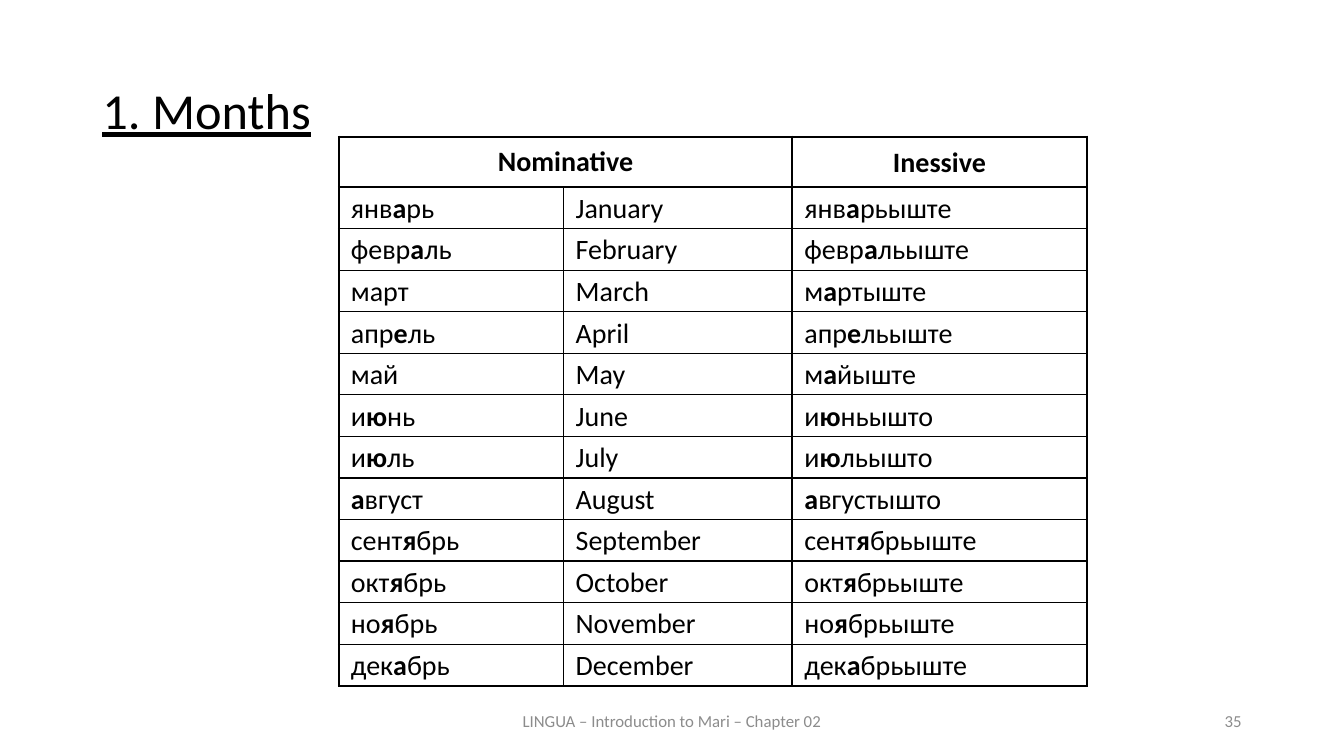
import pptx
import pptx.dml.color
import pptx.enum.text
import pptx.oxml.ns
import pptx.util
from lxml import etree

Pt = pptx.util.Pt
ALIGN = pptx.enum.text.PP_ALIGN
MIDDLE = pptx.enum.text.MSO_ANCHOR.MIDDLE

# Content: stressed vowels stand between asterisks
TITLE = "1. Months"
HEADERS = {0: "*Nominative*", 2: "*Inessive*"}
MONTHS = [
    ("янв*а*рь", "January", "янв*а*рьыште"),
    ("февр*а*ль", "February", "февр*а*льыште"),
    ("март", "March", "м*а*ртыште"),
    ("апр*е*ль", "April", "апр*е*льыште"),
    ("май", "May", "м*а*йыште"),
    ("и*ю*нь", "June", "и*ю*ньышто"),
    ("и*ю*ль", "July", "и*ю*льышто"),
    ("*а*вгуст", "August", "*а*вгустышто"),
    ("сент*я*брь", "September", "сент*я*брьыште"),
    ("окт*я*брь", "October", "окт*я*брьыште"),
    ("но*я*брь", "November", "но*я*брьыште"),
    ("дек*а*брь", "December", "дек*а*брьыште"),
]
# Text, left, width, alignment
FOOTERS = [
    ("LINGUA – Introduction to Mari – Chapter 02", 318, 324, ALIGN.CENTER),
    ("35", 678, 216, ALIGN.RIGHT),
]
FONT = "Calibri"
COLORS = {"text": "000000", "footer": "8C8C8C", "border": "000000"}

# Layout
COLUMN_WIDTHS = [160.6, 163.4, 210.2]
HEADER_HEIGHT, MONTH_HEIGHT = 36, 29.7
TABLE_LEFT, TABLE_TOP = 242, 97.6
THICK, THIN = 1.5, 1
COLUMN_LINES = [THICK, THIN, THICK, THICK]
ROW_LINES = [THICK, THICK] + [THIN] * (len(MONTHS) - 1) + [THICK]


def add_text(p, text, size, color, align):
    p.alignment = align
    for i, part in enumerate(text.split("*")):
        if part:
            r = p.add_run()
            r.text = part
            r.font.name = FONT
            r.font.size = Pt(size)
            r.font.bold = i % 2 == 1
            r.font.color.rgb = pptx.dml.color.RGBColor.from_string(COLORS[color])


def set_borders(cell, widths):
    qn = pptx.oxml.ns.qn
    tc_pr = cell._tc.get_or_add_tcPr()
    for side, width in zip("LRTB", widths):
        line = etree.SubElement(tc_pr, qn("a:ln" + side), w=str(Pt(width)))
        fill = etree.SubElement(line, qn("a:solidFill"))
        etree.SubElement(fill, qn("a:srgbClr"), val=COLORS["border"])


def set_margins(cell, left, top, right, bottom):
    cell.margin_left, cell.margin_top = Pt(left), Pt(top)
    cell.margin_right, cell.margin_bottom = Pt(right), Pt(bottom)


def main():
    prs = pptx.Presentation()
    prs.slide_width, prs.slide_height = Pt(960), Pt(540)
    s = prs.slides.add_slide(prs.slide_layouts[5])

    # Title
    title = s.shapes.title
    title.left, title.top, title.width, title.height = Pt(66), Pt(28.75), Pt(828), Pt(104.4)
    tf = title.text_frame
    tf.vertical_anchor = MIDDLE
    p = tf.paragraphs[0]
    p.line_spacing = 0.9
    p.space_before = Pt(18)
    add_text(p, TITLE, 36, "text", ALIGN.JUSTIFY)
    p.runs[0].font.underline = True

    # Table of months
    rows = [[HEADERS.get(c, "") for c in range(len(COLUMN_WIDTHS))]] + MONTHS
    heights = [HEADER_HEIGHT] + [MONTH_HEIGHT] * len(MONTHS)
    table = s.shapes.add_table(
        len(rows), len(COLUMN_WIDTHS), Pt(TABLE_LEFT), Pt(TABLE_TOP),
        Pt(sum(COLUMN_WIDTHS)), Pt(sum(heights))).table
    for column, width in zip(table.columns, COLUMN_WIDTHS):
        column.width = Pt(width)
    for row, height in zip(table.rows, heights):
        row.height = Pt(height)
    for r_no, texts in enumerate(rows):
        for c_no, text in enumerate(texts):
            cell = table.cell(r_no, c_no)
            set_borders(cell, COLUMN_LINES[c_no:c_no + 2] + ROW_LINES[r_no:r_no + 2])
            cell.fill.background()
            cell.vertical_anchor = MIDDLE
            set_margins(cell, 8.64, 1.44, 8.64, 0)
            align = ALIGN.JUSTIFY if r_no else ALIGN.CENTER
            add_text(cell.text_frame.paragraphs[0], text, 20, "text", align)
    nominative = table.cell(0, 0)
    nominative.merge(table.cell(0, 1))
    set_margins(nominative, 11.52, 5.76, 11.52, 5.76)

    # Footer and slide number
    for text, left, width, align in FOOTERS:
        tf = s.shapes.add_textbox(Pt(left), Pt(500.5), Pt(width), Pt(28.75)).text_frame
        tf.word_wrap = True
        tf.vertical_anchor = MIDDLE
        add_text(tf.paragraphs[0], text, 12, "footer", align)

    prs.save("out.pptx")


if __name__ == "__main__":
    main()
